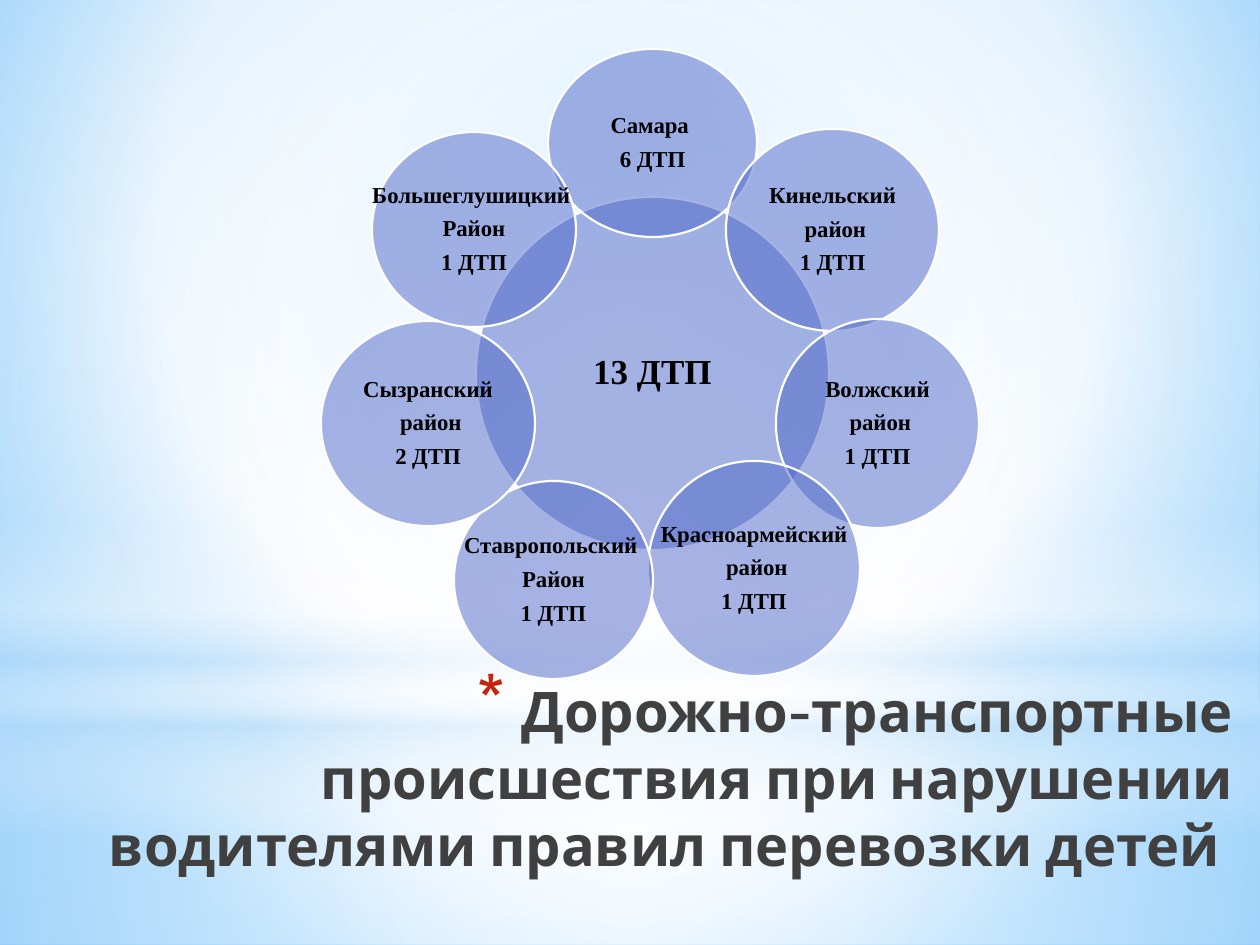
from lxml import etree
from pptx import Presentation
from pptx.dml.color import RGBColor
from pptx.enum.shapes import MSO_SHAPE
from pptx.enum.text import MSO_ANCHOR, PP_ALIGN
from pptx.oxml import parse_xml
from pptx.oxml.ns import nsdecls, qn
from pptx.util import Emu, Pt

RECT, OVAL = MSO_SHAPE.RECTANGLE, MSO_SHAPE.OVAL
TOP, MIDDLE = MSO_ANCHOR.TOP, MSO_ANCHOR.MIDDLE
CENTER, RIGHT = PP_ALIGN.CENTER, PP_ALIGN.RIGHT

PX = 914400 / 126
WHITE = RGBColor(0xFF, 0xFF, 0xFF)
BLACK = RGBColor(0x00, 0x00, 0x00)
INDIGO = RGBColor(0x4E, 0x67, 0xC8)
CHARCOAL = RGBColor(0x40, 0x40, 0x40)
RED = RGBColor(0xC3, 0x26, 0x0C)
SKY = RGBColor(0x9E, 0xD5, 0xFF)
AZURE = RGBColor(0x5B, 0xB9, 0xFF)
PALE = RGBColor(0xB4, 0xDC, 0xFA)

MIDPOINT = (50, 50, 50, 50)
BACKGROUND = [(0, SKY, 100), (60, WHITE, 100), (100, AZURE, 100)]
BACKDROP = [
    (RECT, (0, 703, 1260, 242),
     [(0, WHITE, 91), (37, WHITE, 76), (100, PALE, 79)], MIDPOINT),
    (RECT, (0, 0, 1260, 703),
     [(0, WHITE, 89), (48, WHITE, 62), (100, PALE, 79)], MIDPOINT),
    (RECT, (0, 519, 1260, 315),
     [(0, WHITE, 0), (29, WHITE, 30), (45, PALE, 40),
      (55, WHITE, 26), (65, PALE, 60), (100, WHITE, 0)], None),
    (OVAL, (0, 221, 1260, 703),
     [(0, WHITE, 100), (56, WHITE, 0)], MIDPOINT),
]
TITLE = ("Дорожно-транспортные происшествия при нарушении "
         "водителями правил перевозки детей ")
DISTRICTS = [
    ((548, 49, 209, 188), ["Самара ", "6 ДТП"]),
    ((726, 129, 213, 202), ["Кинельский", " район", "1 ДТП"]),
    ((776, 319, 203, 209), ["Волжский", " район", "1 ДТП"]),
    ((648, 461, 212, 215), ["Красноармейский", " район", "1 ДТП"]),
    ((454, 481, 199, 198), ["Ставропольский ", "Район", "1 ДТП"]),
    ((321, 321, 214, 205), ["Сызранский", " район", "2 ДТП"]),
    ((372, 132, 204, 195), ["Большеглушицкий ", "Район", "1 ДТП"]),
]


def px(length):
    return Emu(round(length * PX))


def set_gradient(properties, stops, focus):
    stop_xml = "".join(
        f'<a:gs pos="{position * 1000}"><a:srgbClr val="{color}">'
        f'<a:alpha val="{opacity * 1000}"/></a:srgbClr></a:gs>'
        for position, color, opacity in stops)
    if focus:
        sides = " ".join(f'{side}="{share * 1000}"'
                         for side, share in zip("ltrb", focus))
        shade = f'<a:path path="circle"><a:fillToRect {sides}/></a:path>'
    else:
        shade = '<a:lin ang="5400000" scaled="0"/>'
    gradient = parse_xml(
        f'<a:gradFill {nsdecls("a")} rotWithShape="1">'
        f'<a:gsLst>{stop_xml}</a:gsLst>{shade}</a:gradFill>')
    solid = properties.find(qn("a:solidFill"))
    properties.replace(solid, gradient)


def add_backdrop(page):
    page.background.fill.solid()
    set_gradient(page.element.find(".//" + qn("p:bgPr")),
                 BACKGROUND, (20, 10, 20, 60))
    for kind, bounds, stops, focus in BACKDROP:
        panel = page.shapes.add_shape(kind, *map(px, bounds))
        panel.shadow.inherit = False
        panel.line.fill.background()
        panel.fill.solid()
        set_gradient(panel.element.spPr, stops, focus)


def format_span(span, font, size, color):
    span.font.name = font
    span.font.size = Pt(size)
    span.font.bold = True
    span.font.color.rgb = color


def add_title(page):
    title = page.shapes.title
    title.element.getparent().append(title.element)
    title.left, title.top, title.width, title.height = map(
        px, (25, 670, 1221, 208))
    frame = title.text_frame
    frame.text = TITLE
    frame.word_wrap = True
    frame.vertical_anchor = TOP
    para = frame.paragraphs[0]
    para.alignment = RIGHT
    format_span(para.runs[0], "Cabin", 32, CHARCOAL)
    properties = para._p.get_or_add_pPr()
    properties.set("marL", str(px(44)))
    properties.set("indent", str(px(-44)))
    bullet_color = etree.SubElement(properties, qn("a:buClr"))
    etree.SubElement(bullet_color, qn("a:srgbClr"), val=str(RED))
    etree.SubElement(properties, qn("a:buSzPct"), val="128000")
    etree.SubElement(properties, qn("a:buChar"), char="*")


def add_circle(page, bounds, lines, size):
    circle = page.shapes.add_shape(OVAL, *map(px, bounds))
    circle.shadow.inherit = False
    circle.fill.solid()
    circle.fill.fore_color.rgb = INDIGO
    color = circle.element.spPr.find(qn("a:solidFill"))[0]
    etree.SubElement(color, qn("a:alpha"), val="50000")
    circle.line.color.rgb = WHITE
    circle.line.width = Pt(1.25)
    frame = circle.text_frame
    frame.text = "\n".join(lines)
    frame.word_wrap = False
    frame.vertical_anchor = MIDDLE
    frame.margin_left = frame.margin_right = px(3)
    frame.margin_top = frame.margin_bottom = px(3)
    for para in frame.paragraphs:
        para.alignment = CENTER
        para.line_spacing = 0.9
        para.space_after = Pt(size * 0.4)
        format_span(para.runs[0], "Times New Roman", size, BLACK)


def main():
    deck = Presentation()
    deck.slide_width, deck.slide_height = px(1260), px(945)
    page = deck.slides.add_slide(deck.slide_layouts[5])
    add_backdrop(page)
    add_title(page)
    add_circle(page, (476, 197, 353, 353), ["13 ДТП"], 20)
    for bounds, lines in DISTRICTS:
        add_circle(page, bounds, lines, 13)
    deck.save("out.pptx")


if __name__ == "__main__":
    main()
